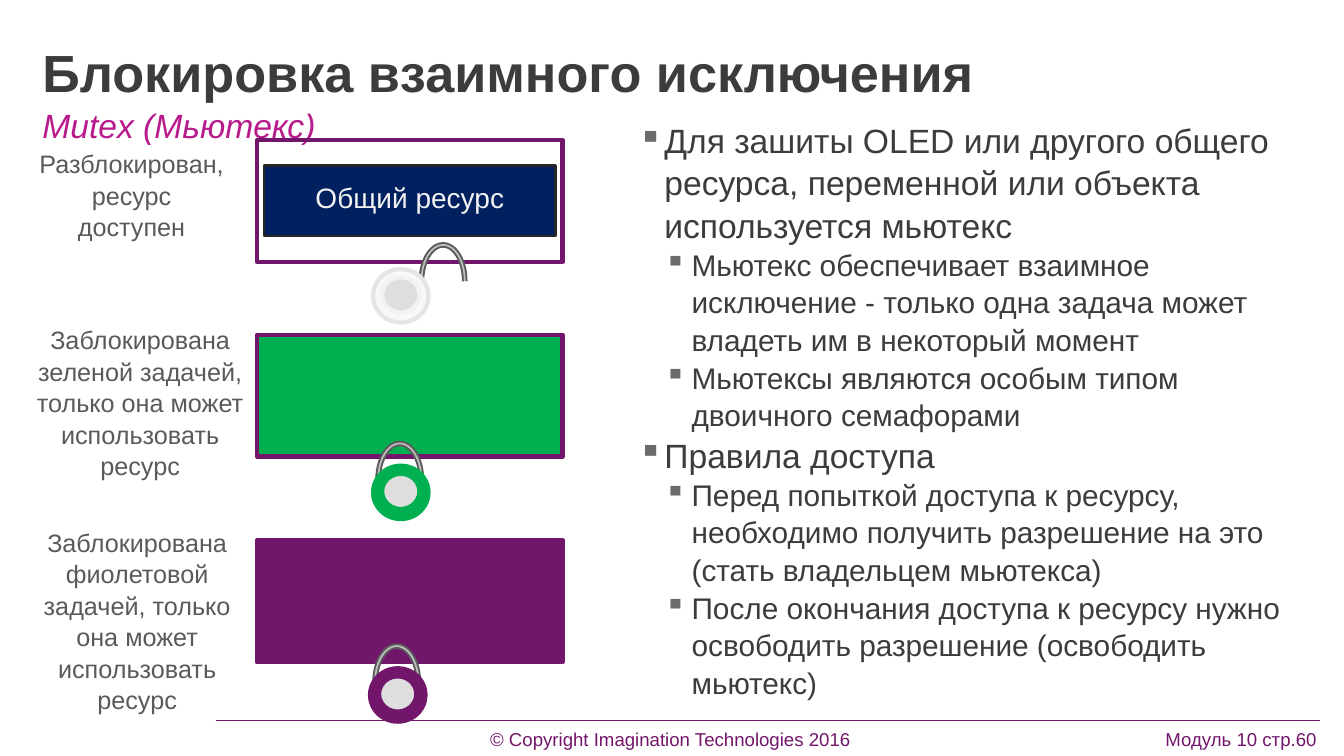
from dataclasses import dataclass
from typing import Any, Optional

from lxml.etree import SubElement
from pptx import Presentation
from pptx.dml.color import RGBColor
from pptx.enum.shapes import MSO_CONNECTOR, MSO_SHAPE
from pptx.enum.text import MSO_ANCHOR, PP_ALIGN
from pptx.oxml.ns import qn
from pptx.util import Inches, Pt


@dataclass(frozen=True)
class Theme:
    font: str = "Arial"
    text: str = "3C3C3C"
    label: str = "5A5A5A"
    bullet: str = "6B6B6B"
    purple: str = "72166B"
    magenta: str = "B71A8B"
    green: str = "00B050"
    navy: str = "002060"
    navy_edge: str = "262626"
    resource_text: str = "F2F2F2"
    core: str = "DEDEDE"
    open_fill: str = "F8F8F8"
    open_edge: str = "E5E5E5"
    shackle: str = "5A5A5A"
    shackle_shine: str = "BEBEBE"
    title_size: float = 37.3
    point_size: float = 24
    subpoint_size: float = 21.3
    resource_size: float = 20
    label_size: float = 18
    footer_size: float = 13.3


THEME = Theme()


@dataclass(frozen=True)
class Box:
    left: float
    top: float
    width: float
    height: float

    def lengths(self) -> tuple:
        return tuple(Inches(value) for value in (self.left, self.top, self.width, self.height))


@dataclass(frozen=True)
class Style:
    size: float
    color: str
    bold: bool = False
    italic: bool = False
    align: PP_ALIGN = PP_ALIGN.LEFT
    spacing: float = 1.05


@dataclass(frozen=True)
class Point:
    text: str
    level: int = 0


@dataclass(frozen=True)
class Mutex:
    label: str
    label_box: Box
    frame_top: float
    frame_fill: Optional[str]
    ring_left: float
    ring_top: float
    ring_fill: str
    ring_edge: str
    core_edge: str
    shackle_shift: tuple[float, float] = (0.05, -0.22)
    resource: str = ""


LABEL = Style(THEME.label_size, THEME.label, align=PP_ALIGN.CENTER, spacing=1.04)
RESOURCE = Style(THEME.resource_size, THEME.resource_text, align=PP_ALIGN.CENTER, spacing=0.8)
POINT_STYLES = (Style(THEME.point_size, THEME.text), Style(THEME.subpoint_size, THEME.text))
POINT_INDENTS = ((0.26, -0.26), (0.53, -0.27))

POINTS = (
    Point("Для зашиты OLED или другого общего ресурса, переменной или объекта используется мьютекс"),
    Point("Мьютекс обеспечивает взаимное исключение - только одна задача может владеть им в некоторый момент", 1),
    Point("Мьютексы являются особым типом двоичного семафорами", 1),
    Point("Правила доступа"),
    Point("Перед попыткой доступа к ресурсу, необходимо получить разрешение на это (стать владельцем мьютекса)", 1),
    Point("После окончания доступа к ресурсу нужно освободить разрешение (освободить мьютекс)", 1),
)

MUTEXES = (
    Mutex("Заблокирована фиолетовой задачей, только она может использовать ресурс",
          Box(0.17, 5.18, 2.38, 1.9), 5.36, THEME.purple, 3.67, 6.63,
          THEME.purple, THEME.purple, THEME.purple),
    Mutex("Заблокирована зеленой задачей, только она может использовать ресурс",
          Box(0.18, 3.17, 2.42, 1.6), 3.32, THEME.green, 3.7, 4.62,
          THEME.green, THEME.green, THEME.green),
    Mutex("Разблокирован, ресурс доступен",
          Box(0.29, 1.42, 2.03, 1.02), 1.39, None, 3.7, 2.67,
          THEME.open_fill, THEME.open_edge, THEME.resource_text,
          (0.48, -0.24), "Общий ресурс"),
)


def apply(target: Any, values: dict[str, Any]) -> None:
    for name, value in values.items():
        setattr(target, name, value)


def prepare_frame(frame: Any, side: float = 0, end: float = 0, anchor: MSO_ANCHOR = MSO_ANCHOR.TOP) -> None:
    apply(frame, {
        "word_wrap": True, "vertical_anchor": anchor,
        "margin_left": Inches(side), "margin_right": Inches(side),
        "margin_top": Inches(end), "margin_bottom": Inches(end),
    })


def write(paragraph: Any, text: str, style: Style) -> None:
    apply(paragraph, {"alignment": style.align, "line_spacing": style.spacing,
                      "space_before": Pt(0), "space_after": Pt(0)})
    run = paragraph.add_run()
    run.text = text
    apply(run.font, {"name": THEME.font, "size": Pt(style.size), "bold": style.bold, "italic": style.italic})
    run.font.color.rgb = RGBColor.from_string(style.color)


def add_text(slide: Any, box: Box, text: str, style: Style, side: float = 0, end: float = 0) -> Any:
    frame = slide.shapes.add_textbox(*box.lengths()).text_frame
    prepare_frame(frame, side, end)
    write(frame.paragraphs[0], text, style)
    return frame.paragraphs[0]


def add_part(group: Any, kind: MSO_SHAPE, box: Box, fill: Optional[str], edge: str, width: float = 3) -> Any:
    shape = group.shapes.add_shape(kind, *box.lengths())
    shape.shadow.inherit = False
    if fill:
        shape.fill.solid()
        shape.fill.fore_color.rgb = RGBColor.from_string(fill)
    else:
        shape.fill.background()
    shape.line.color.rgb = RGBColor.from_string(edge)
    shape.line.width = Pt(width)
    return shape


def add_mutex(slide: Any, mutex: Mutex) -> None:
    group = slide.shapes.add_group_shape()
    if mutex.resource:
        resource = add_part(group, MSO_SHAPE.RECTANGLE, Box(2.62, mutex.frame_top + 0.25, 2.89, 0.7),
                            THEME.navy, THEME.navy_edge, 1.75)
        prepare_frame(resource.text_frame, 0.08, 0.08, MSO_ANCHOR.MIDDLE)
        write(resource.text_frame.paragraphs[0], mutex.resource, RESOURCE)
    add_part(group, MSO_SHAPE.RECTANGLE, Box(2.55, mutex.frame_top, 3.03, 1.21),
             mutex.frame_fill, THEME.purple)
    shift_x, shift_y = mutex.shackle_shift
    shackle_box = Box(mutex.ring_left + shift_x, mutex.ring_top + shift_y, 0.43, 0.72)
    for color, width in ((THEME.shackle, 4), (THEME.shackle_shine, 1.25)):
        arc = add_part(group, MSO_SHAPE.ARC, shackle_box, None, color, width)
        arc.adjustments[0], arc.adjustments[1] = 107.91, 0
    add_part(group, MSO_SHAPE.OVAL, Box(mutex.ring_left, mutex.ring_top, 0.55, 0.53),
             mutex.ring_fill, mutex.ring_edge)
    add_part(group, MSO_SHAPE.OVAL, Box(mutex.ring_left + 0.09, mutex.ring_top + 0.08, 0.37, 0.35),
             THEME.core, mutex.core_edge)


def add_points(slide: Any, box: Box, points: tuple[Point, ...]) -> None:
    frame = slide.shapes.add_textbox(*box.lengths()).text_frame
    prepare_frame(frame)
    for index, point in enumerate(points):
        paragraph = frame.add_paragraph() if index else frame.paragraphs[0]
        paragraph.level = point.level
        properties = paragraph._p.get_or_add_pPr()
        left, indent = POINT_INDENTS[point.level]
        properties.set("marL", str(Inches(left)))
        properties.set("indent", str(Inches(indent)))
        bullet_color = SubElement(properties, qn("a:buClr"))
        SubElement(bullet_color, qn("a:srgbClr"), val=THEME.bullet)
        SubElement(properties, qn("a:buChar"), char="▪")
        write(paragraph, point.text, POINT_STYLES[point.level])


def add_footer(slide: Any) -> None:
    paragraph = add_text(slide, Box(0.24, 7.25, 12.86, 0.2),
                         "\t© Copyright Imagination Technologies 2016\tМодуль 10 стр.60",
                         Style(THEME.footer_size, THEME.purple, spacing=0.9))
    tabs = SubElement(paragraph._p.get_or_add_pPr(), qn("a:tabLst"))
    for position, align in ((6.41, "ctr"), (12.82, "r")):
        SubElement(tabs, qn("a:tab"), pos=str(Inches(position)), algn=align)
    rule = slide.shapes.add_connector(MSO_CONNECTOR.STRAIGHT, Inches(2.14), Inches(7.15), Inches(13.09), Inches(7.15))
    rule.line.color.rgb = RGBColor.from_string(THEME.purple)
    rule.line.width = Pt(0.5)
    SubElement(rule._element.spPr, qn("a:effectLst"))


def main() -> None:
    presentation = Presentation()
    apply(presentation, {"slide_width": Inches(13.33), "slide_height": Inches(7.5)})
    slide = presentation.slides.add_slide(presentation.slide_layouts[5])
    add_footer(slide)
    title = slide.shapes.title
    apply(title, dict(zip(("left", "top", "width", "height"), Box(0.42, 0.49, 12.68, 0.47).lengths())))
    prepare_frame(title.text_frame)
    write(title.text_frame.paragraphs[0], "Блокировка взаимного исключения",
          Style(THEME.title_size, THEME.text, bold=True, spacing=0.85))
    add_points(slide, Box(6.33, 1.17, 6.69, 5.67), POINTS)
    add_text(slide, Box(0.42, 1.02, 12.68, 0.31), "Mutex (Мьютекс)",
             Style(THEME.point_size, THEME.magenta, italic=True))
    for mutex in MUTEXES:
        add_mutex(slide, mutex)
    for mutex in reversed(MUTEXES):
        add_text(slide, mutex.label_box, mutex.label, LABEL, 0.09, 0.04)
    presentation.save("out.pptx")


if __name__ == "__main__":
    main()
